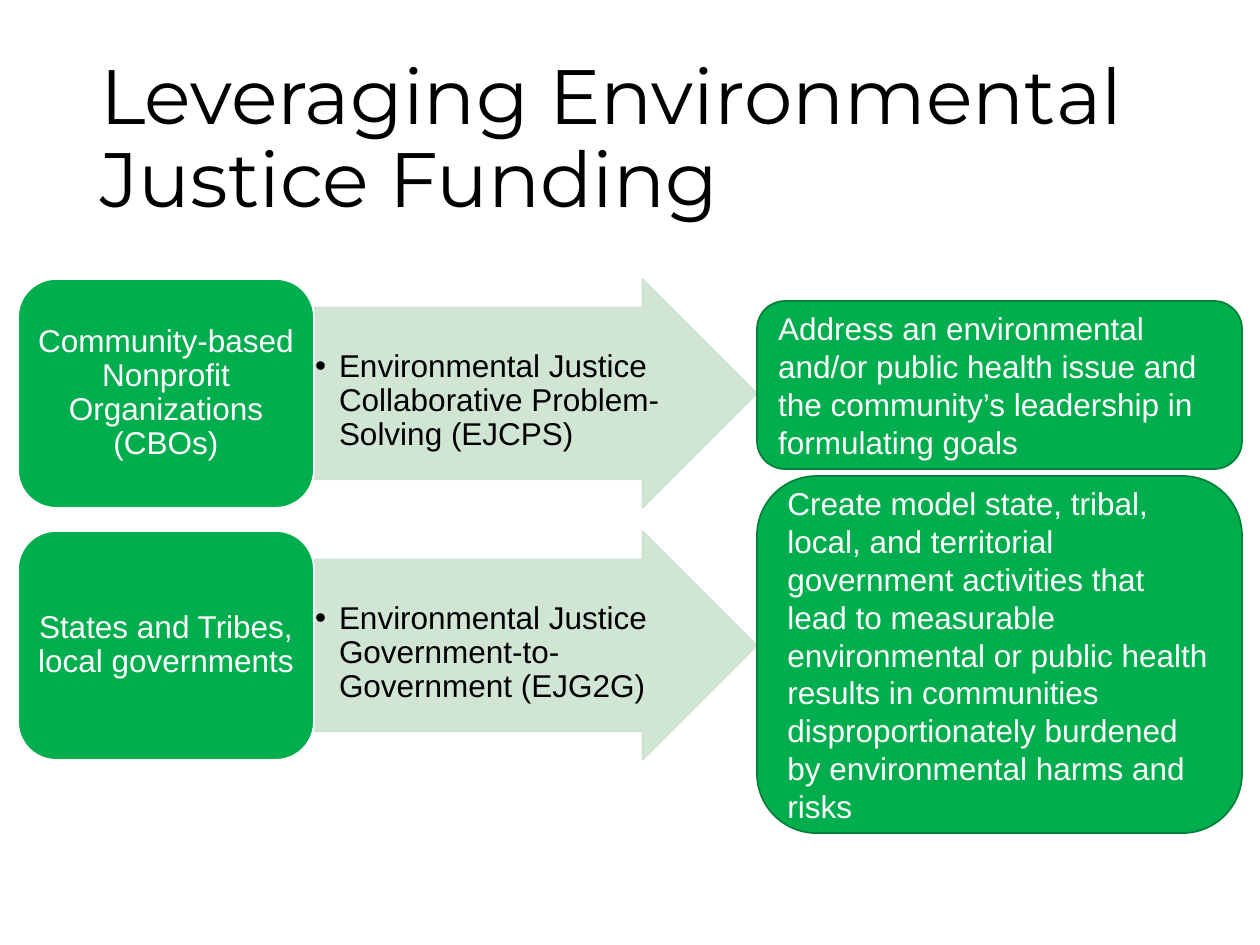
from dataclasses import dataclass

from lxml import etree
from pptx import Presentation
from pptx.dml.color import RGBColor
from pptx.enum.shapes import MSO_SHAPE
from pptx.enum.text import MSO_ANCHOR, MSO_AUTO_SIZE, PP_ALIGN
from pptx.oxml.ns import qn
from pptx.util import Emu, Pt

ARROW, ROUND, PROCESS = (MSO_SHAPE.RIGHT_ARROW, MSO_SHAPE.ROUNDED_RECTANGLE,
                         MSO_SHAPE.FLOWCHART_ALTERNATE_PROCESS)
TOP, MIDDLE = MSO_ANCHOR.TOP, MSO_ANCHOR.MIDDLE
LEFT, CENTER = PP_ALIGN.LEFT, PP_ALIGN.CENTER
NO_FIT = MSO_AUTO_SIZE.NONE
PX_PER_INCH = 126


@dataclass(frozen=True)
class Theme:
    """Colours, fonts and type sizes of the slide."""
    green: str = "00AE4D"
    dark_green: str = "008139"
    pale_green: str = "CCE3D0"
    white: str = "FFFFFF"
    black: str = "000000"
    title_font: str = "Montserrat"
    body_font: str = "Arial"
    title_size: int = 44
    body_size: int = 18


THEME = Theme()
TITLE = "Leveraging Environmental Justice Funding"
PROGRAMS = [
    ("Community-based Nonprofit Organizations (CBOs)",
     "Environmental Justice Collaborative Problem-Solving (EJCPS)"),
    ("States and Tribes, local governments",
     "Environmental Justice Government-to-Government (EJG2G)"),
]
OUTCOMES = [
    ("Address an environmental and/or public health issue and the "
     "community’s leadership in formulating goals", 301, 168),
    ("Create model state, tribal, local, and territorial government "
     "activities that lead to measurable environmental or public health "
     "results in communities disproportionately burdened by environmental "
     "harms and risks", 476, 357),
]


def px(n):
    """Turn pixels into EMU."""
    return Emu(round(n * 914400 / PX_PER_INCH))


def write(sp, text, color, align=LEFT, anchor=MIDDLE, spacing=1.0,
          insets=(13, 6), font=THEME.body_font, size=THEME.body_size):
    """Put one formatted paragraph in a shape and return it."""
    tf = sp.text_frame
    tf.word_wrap = True
    tf.auto_size = NO_FIT
    tf.vertical_anchor = anchor
    tf.margin_left = tf.margin_right = px(insets[0])
    tf.margin_top = tf.margin_bottom = px(insets[1])
    tf.text = text
    p = tf.paragraphs[0]
    p.alignment = align
    p.line_spacing = spacing
    r = p.runs[0]
    r.font.name = font
    r.font.size = Pt(size)
    r.font.color.rgb = RGBColor.from_string(color)
    return p


def add_block(s, kind, x, y, w, h, fill, line):
    """Add a flat filled shape with a thin outline."""
    sp = s.shapes.add_shape(kind, px(x), px(y), px(w), px(h))
    sp.shadow.inherit = False
    sp.fill.solid()
    sp.fill.fore_color.rgb = RGBColor.from_string(fill)
    sp.line.color.rgb = RGBColor.from_string(line)
    sp.line.width = Pt(1)
    return sp


def add_bullet(p, indent):
    """Give a paragraph a hanging round bullet."""
    pPr = p._p.get_or_add_pPr()
    pPr.set("marL", str(px(indent)))
    pPr.set("indent", str(-px(indent)))
    etree.SubElement(pPr, qn("a:buFont")).set("typeface", THEME.body_font)
    etree.SubElement(pPr, qn("a:buChar")).set("char", "•")


def add_title(s, x, y, w, h):
    """Place and format the title placeholder."""
    sp = s.shapes.title
    sp.left, sp.top, sp.width, sp.height = px(x), px(y), px(w), px(h)
    write(sp, TITLE, THEME.black, spacing=0.9,
          font=THEME.title_font, size=THEME.title_size)


def add_program(s, x, y, w, h, applicant, program):
    """Draw an applicant box and the arrow naming its program."""
    box_w = 296
    arrow_x, arrow_w = x + box_w, w - box_w
    arrow = add_block(s, ARROW, arrow_x, y, arrow_w, h,
                      THEME.pale_green, THEME.pale_green)
    arrow.adjustments[0] = 0.75
    arrow.adjustments[1] = 0.5
    for color in arrow._element.spPr.iter(qn("a:srgbClr")):
        etree.SubElement(color, qn("a:alpha")).set("val", "90000")
    label = s.shapes.add_textbox(px(arrow_x), px(y + 70), px(358), px(130))
    p = write(label, program, THEME.black, anchor=TOP, spacing=0.9,
              insets=(1, 1))
    add_bullet(p, 24)
    box = add_block(s, ROUND, x, y, box_w, h, THEME.green, THEME.white)
    write(box, applicant, THEME.white, CENTER, spacing=0.9, insets=(9, 5))


def add_outcome(s, x, y, w, h, text):
    """Draw a box stating what the funding achieves."""
    sp = add_block(s, PROCESS, x, y, w, h, THEME.green, THEME.dark_green)
    write(sp, text, THEME.white)


def main():
    """Build and save the slide."""
    prs = Presentation()
    prs.slide_width, prs.slide_height = px(1260), px(945)
    s = prs.slides.add_slide(prs.slide_layouts[5])
    add_title(s, 87, 50, 1086, 183)
    for i, (applicant, program) in enumerate(PROGRAMS):
        add_program(s, 18, 279 + 252 * i, 739, 229, applicant, program)
    for text, y, h in OUTCOMES:
        add_outcome(s, 757, y, 485, h, text)
    prs.save("out.pptx")


if __name__ == "__main__":
    main()
